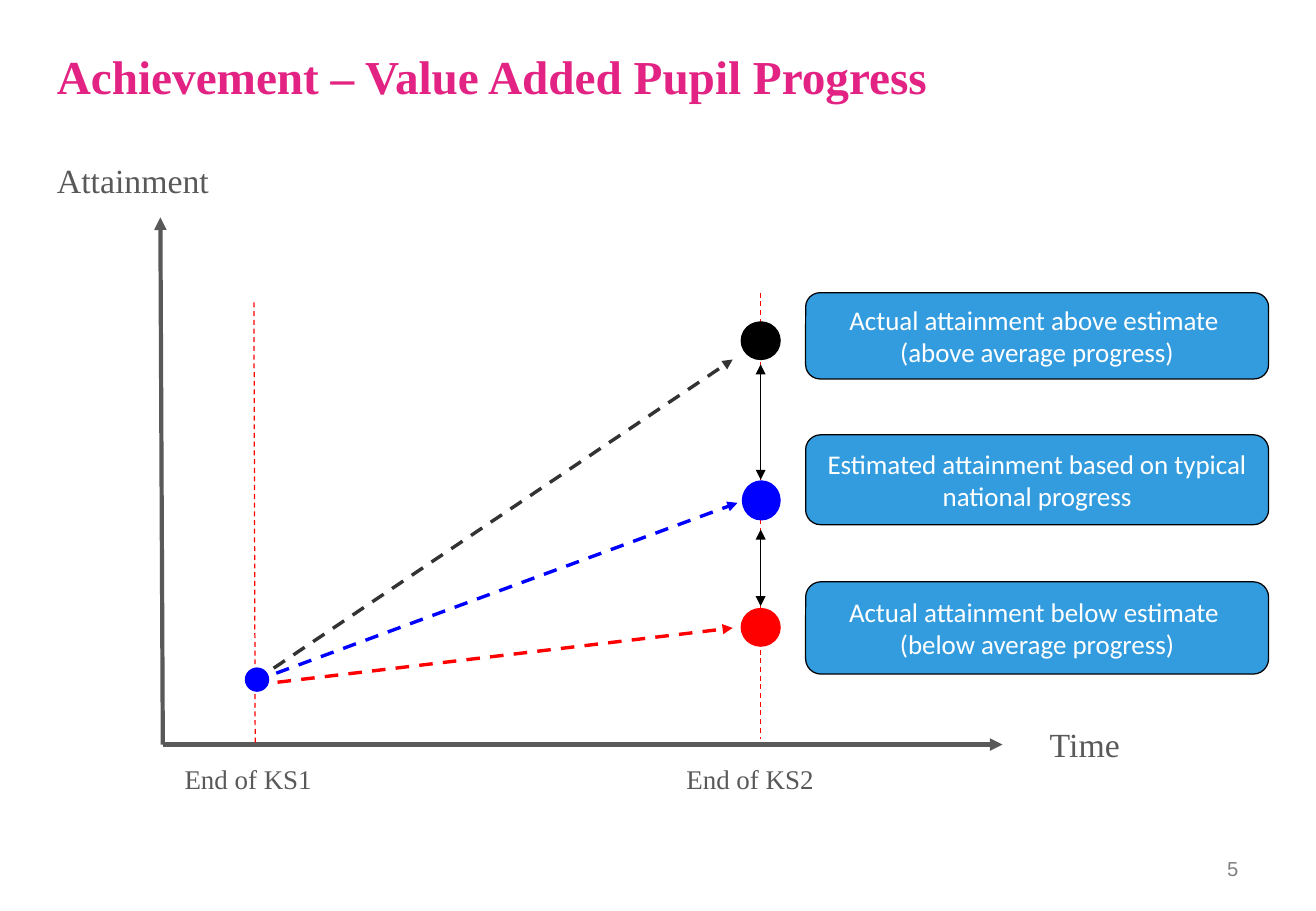
from dataclasses import dataclass

from lxml.etree import SubElement
from pptx import Presentation
from pptx.dml.color import RGBColor
from pptx.enum.dml import MSO_LINE
from pptx.enum.shapes import MSO_CONNECTOR, MSO_SHAPE
from pptx.enum.text import MSO_ANCHOR, PP_ALIGN
from pptx.oxml.ns import qn
from pptx.util import Emu, Pt

PX = 9144  # 100 px to the inch
SERIF = "Times New Roman"
PINK, SKY = "E32383", "339CDF"
GREY, BLACK, RED, BLUE = "595959", "000000", "FF0000", "0000FF"
KS1_X, KS2_X, AXIS_X, AXIS_Y = 209, 626, 134, 613


@dataclass
class Span:
    text: str
    color: str
    size: int
    font: str = SERIF
    bold: bool = False


@dataclass
class Label:
    left: int
    top: int
    width: int
    height: int
    span: Span
    align: PP_ALIGN = PP_ALIGN.LEFT
    anchor: MSO_ANCHOR = MSO_ANCHOR.TOP


@dataclass
class Line:
    start: tuple[int, int]
    end: tuple[int, int]
    color: str
    weight: float
    dashed: bool = False
    head: bool = False
    tail: bool = False


@dataclass
class Dot:
    left: int
    top: int
    width: int
    height: int
    color: str


@dataclass
class Callout:
    top: int
    height: int
    paragraphs: list[str]


LABELS = [
    Label(37, 0, 1046, 125,
          Span("Achievement – Value Added Pupil Progress", PINK, 28, bold=True),
          anchor=MSO_ANCHOR.MIDDLE),
    Label(37, 127, 218, 44, Span("Attainment", GREY, 20)),
    Label(854, 591, 118, 44, Span("Time", GREY, 20)),
    Label(142, 623, 218, 37, Span("End of KS1", GREY, 16)),
    Label(555, 623, 175, 37, Span("End of KS2", GREY, 16)),
    Label(776, 695, 253, 40, Span("5", "808080", 12, "Arial"),
          PP_ALIGN.RIGHT, MSO_ANCHOR.MIDDLE),
]

LINES = [
    # Axes
    Line((AXIS_X, AXIS_Y), (825, AXIS_Y), GREY, 2.5, tail=True),
    Line((AXIS_X, AXIS_Y), (132, 179), GREY, 2.5, tail=True),
    # Key stage markers
    Line((KS1_X, 249), (210, AXIS_Y), RED, 0.75, dashed=True),
    Line((KS2_X, 241), (KS2_X, 608), RED, 0.75, dashed=True),
    # Progress paths
    Line((KS1_X, 561), (603, 296), "333333", 2, dashed=True, tail=True),
    Line((KS1_X, 564), (603, 517), RED, 2, dashed=True, tail=True),
    Line((KS1_X, 561), (607, 414), BLUE, 2, dashed=True, tail=True),
    # Gaps between actual and estimate
    Line((KS2_X, 300), (KS2_X, 395), BLACK, 0.75, head=True, tail=True),
    Line((KS2_X, 436), (KS2_X, 499), BLACK, 0.75, head=True, tail=True),
]

DOTS = [
    Dot(202, 550, 19, 19, BLUE),
    Dot(610, 265, 32, 31, BLACK),
    Dot(611, 396, 31, 32, BLUE),
    Dot(610, 501, 32, 31, RED),
]

CALLOUTS = [
    Callout(241, 71, ["Actual attainment above estimate ", "(above average progress)"]),
    Callout(358, 74, ["Estimated attainment based on typical national progress"]),
    Callout(479, 76, ["Actual attainment below estimate ", "(below average progress)"]),
]


def px(length: int) -> Emu:
    return Emu(length * PX)


def rgb(value: str) -> RGBColor:
    return RGBColor.from_string(value)


def add_span(para, span: Span) -> None:
    run = para.add_run()
    run.text = span.text
    run.font.name = span.font
    run.font.size = Pt(span.size)
    run.font.bold = span.bold
    run.font.color.rgb = rgb(span.color)


def add_label(page, label: Label) -> None:
    box = page.shapes.add_textbox(
        px(label.left), px(label.top), px(label.width), px(label.height))
    frame = box.text_frame
    frame.word_wrap = True
    frame.vertical_anchor = label.anchor
    para = frame.paragraphs[0]
    para.alignment = label.align
    add_span(para, label.span)


def add_line(page, line: Line) -> None:
    connector = page.shapes.add_connector(
        MSO_CONNECTOR.STRAIGHT, *map(px, line.start + line.end))
    connector.line.color.rgb = rgb(line.color)
    connector.line.width = Pt(line.weight)
    if line.dashed:
        connector.line.dash_style = MSO_LINE.DASH
    outline = connector.line._get_or_add_ln()
    for tag, shown in (("a:headEnd", line.head), ("a:tailEnd", line.tail)):
        if shown:
            SubElement(outline, qn(tag), type="triangle")
    SubElement(connector._element.spPr, qn("a:effectLst"))


def add_filled(page, kind: MSO_SHAPE, area: tuple[int, int, int, int],
               fill: str, outline: str):
    shape = page.shapes.add_shape(kind, *map(px, area))
    shape.shadow.inherit = False
    shape.fill.solid()
    shape.fill.fore_color.rgb = rgb(fill)
    shape.line.color.rgb = rgb(outline)
    shape.line.width = Pt(0.75)
    return shape


def add_callout(page, callout: Callout) -> None:
    area = (663, callout.top, 381, callout.height)
    shape = add_filled(page, MSO_SHAPE.ROUNDED_RECTANGLE, area, SKY, BLACK)
    frame = shape.text_frame
    frame.word_wrap = True
    frame.vertical_anchor = MSO_ANCHOR.MIDDLE
    for index, text in enumerate(callout.paragraphs):
        para = frame.add_paragraph() if index else frame.paragraphs[0]
        para.alignment = PP_ALIGN.CENTER
        add_span(para, Span(text, "FFFFFF", 16, "Calibri"))


def main() -> None:
    deck = Presentation()
    deck.slide_width, deck.slide_height = px(1083), px(750)
    page = deck.slides.add_slide(deck.slide_layouts[6])
    for label in LABELS:
        add_label(page, label)
    for line in LINES:
        add_line(page, line)
    for dot in DOTS:
        area = (dot.left, dot.top, dot.width, dot.height)
        add_filled(page, MSO_SHAPE.OVAL, area, dot.color, dot.color)
    for callout in CALLOUTS:
        add_callout(page, callout)
    deck.save("out.pptx")


if __name__ == "__main__":
    main()
